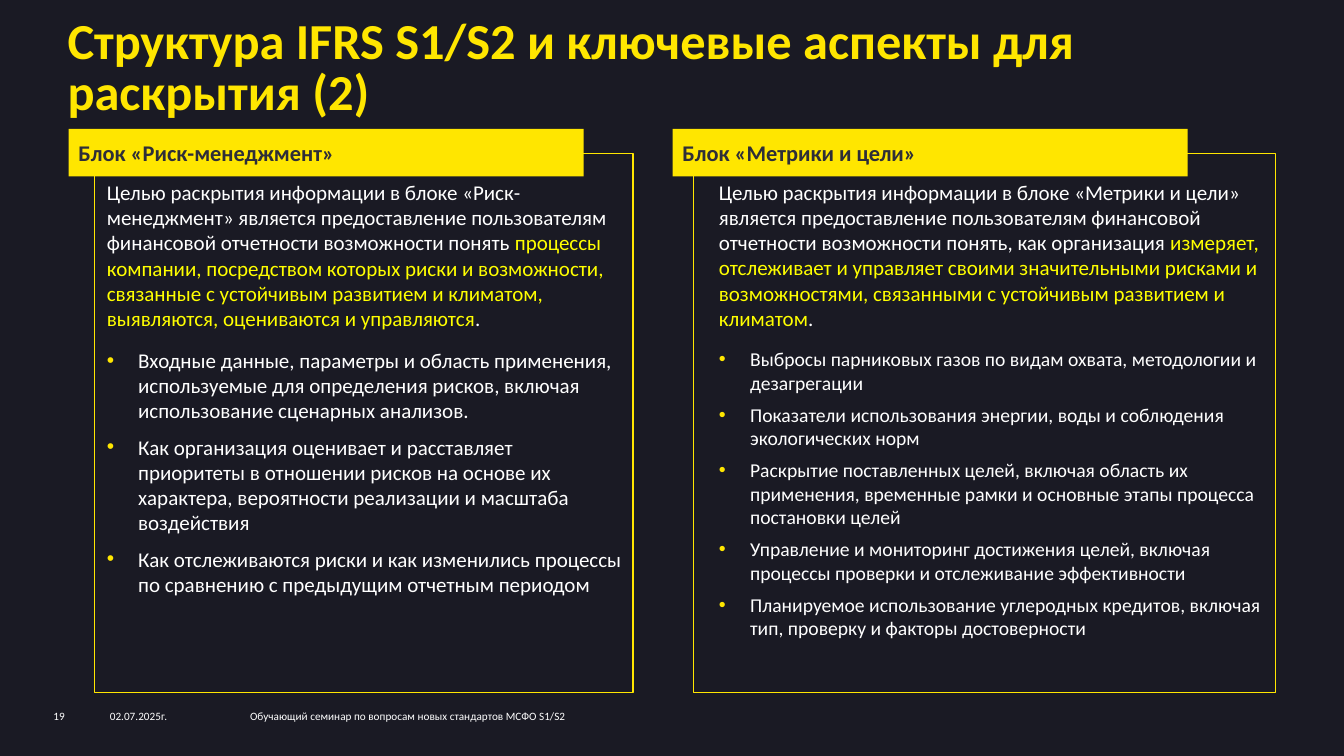
"""Build the slide on risk management, metrics and goals in IFRS S1/S2."""
from lxml.etree import SubElement
from pptx import Presentation
from pptx.dml.color import RGBColor
from pptx.enum.shapes import MSO_SHAPE
from pptx.enum.text import MSO_ANCHOR, PP_ALIGN
from pptx.oxml.ns import qn
from pptx.util import Inches, Pt

YELLOW, BRIGHT, WHITE = "FFE600", "FFFF00", "FFFFFF"
DARK, GREY = "1A1A24", "2E2E38"


def color(code):
    return RGBColor.from_string(code)


class Deck:
    """Hold the style and the current slide."""

    def __init__(self, font):
        self.font = font
        self.prs = Presentation()
        self.prs.slide_width = Inches(13.33)
        self.prs.slide_height = Inches(7.5)
        self.slide = self.prs.slides.add_slide(self.prs.slide_layouts[6])
        back = self.slide.background.fill
        back.solid()
        back.fore_color.rgb = color(DARK)

    def style(self, run, size, code, bold=False):
        run.font.name = self.font
        run.font.size = Pt(size)
        run.font.bold = bold
        run.font.color.rgb = color(code)

    def frame(self, shape, inset=0, wrap=True):
        frame = shape.text_frame
        frame.margin_left = Inches(inset)
        frame.margin_top = frame.margin_right = frame.margin_bottom = 0
        frame.word_wrap = wrap
        return frame

    def box(self, x, y, w, h):
        area = [Inches(n) for n in (x, y, w, h)]
        return self.frame(self.slide.shapes.add_textbox(*area))

    def label(self, text, x, y, w, h, size, code=WHITE, bold=False):
        para = self.box(x, y, w, h).paragraphs[0]
        para.text = text
        self.style(para.runs[0], size, code, bold)
        return para

    def rect(self, x, y, w, h, fill=None, line=None):
        area = [Inches(n) for n in (x, y, w, h)]
        shape = self.slide.shapes.add_shape(MSO_SHAPE.RECTANGLE, *area)
        shape.shadow.inherit = False
        if fill:
            shape.fill.solid()
            shape.fill.fore_color.rgb = color(fill)
        else:
            shape.fill.background()
        if line:
            shape.line.color.rgb = color(line)
            shape.line.width = Pt(1)
        else:
            shape.line.fill.background()
        return shape

    def head(self, text, x):
        shape = self.rect(x, 1.28, 5.11, 0.47, fill=YELLOW)
        frame = self.frame(shape, inset=0.1, wrap=False)
        frame.vertical_anchor = MSO_ANCHOR.MIDDLE
        para = frame.paragraphs[0]
        para.text = text
        para.alignment = PP_ALIGN.LEFT
        self.style(para.runs[0], 16, GREY, True)

    def bullet(self, para, text, size, gap):
        para.text = text
        props = para._p.get_or_add_pPr()
        props.set("marL", str(Inches(0.31)))
        props.set("indent", str(-Inches(0.31)))
        para.space_after = Pt(gap)
        tint = SubElement(props, qn("a:buClr"))
        SubElement(tint, qn("a:srgbClr")).set("val", YELLOW)
        SubElement(props, qn("a:buFont")).set("typeface", "Arial")
        SubElement(props, qn("a:buChar")).set("char", "•")
        self.style(para.runs[0], size, WHITE)

    def body(self, area, goal, items, size, gap):
        frame = self.box(*area)
        intro = frame.paragraphs[0]
        intro.space_after = Pt(12)
        for text, code in zip(goal, (WHITE, BRIGHT, WHITE)):
            run = intro.add_run()
            run.text = text
            self.style(run, 15, code)
        for item in items:
            self.bullet(frame.add_paragraph(), item, size, gap)


RISKS = (
    "Входные данные, параметры и область применения, используемые для "
    "определения рисков, включая использование сценарных анализов.",
    "Как организация оценивает и расставляет приоритеты в отношении рисков "
    "на основе их характера, вероятности реализации и масштаба воздействия",
    "Как отслеживаются риски и как изменились процессы по сравнению с "
    "предыдущим отчетным периодом",
)
GOALS = (
    "Выбросы парниковых газов по видам охвата, методологии и дезагрегации",
    "Показатели использования энергии, воды и соблюдения экологических норм",
    "Раскрытие поставленных целей, включая область их применения, временные "
    "рамки и основные этапы процесса постановки целей",
    "Управление и мониторинг достижения целей, включая процессы проверки и "
    "отслеживание эффективности",
    "Планируемое использование углеродных кредитов, включая тип, проверку и "
    "факторы достоверности",
)
RISK_GOAL = (
    "Целью раскрытия информации в блоке «Риск-менеджмент» является "
    "предоставление пользователям финансовой отчетности возможности понять ",
    "процессы компании, посредством которых риски и возможности, связанные с "
    "устойчивым развитием и климатом, выявляются, оцениваются и управляются",
    ".",
)
METRIC_GOAL = (
    "Целью раскрытия информации в блоке «Метрики и цели» является "
    "предоставление пользователям финансовой отчетности возможности понять, "
    "как организация ",
    "измеряет, отслеживает и управляет своими значительными рисками и "
    "возможностями, связанными с устойчивым развитием и климатом",
    ".",
)
BLOCKS = (
    ("Блок «Риск-менеджмент»", 0.68, (0.94, 5.34),
     (1.06, 1.78, 5.11, 4.99), RISK_GOAL, RISKS, 15, 8),
    ("Блок «Метрики и цели»", 6.67, (6.88, 5.77),
     (7.13, 1.78, 5.42, 4.86), METRIC_GOAL, GOALS, 14, 6),
)
FOOTER = (
    ("19", 0.53, 0.56),
    ("02.07.2025г.", 1.09, 1.4),
    ("Обучающий семинар по вопросам новых стандартов МСФО S1/S2", 2.48, 4.18),
)


def main():
    deck = Deck("Calibri")
    title = deck.label(
        "Структура IFRS S1/S2 и ключевые аспекты для раскрытия (2)",
        0.67, 0.18, 12, 0.65, 36, YELLOW, True)
    title.line_spacing = 0.85
    for name, left, (x, w), area, goal, items, size, gap in BLOCKS:
        deck.rect(x, 1.52, w, 5.35, line=YELLOW)
        deck.head(name, left)
        deck.body(area, goal, items, size, gap)
    for text, x, w in FOOTER:
        deck.label(text, x, 7.04, w, 0.13, 8)
    deck.prs.save("out.pptx")


if __name__ == "__main__":
    main()
